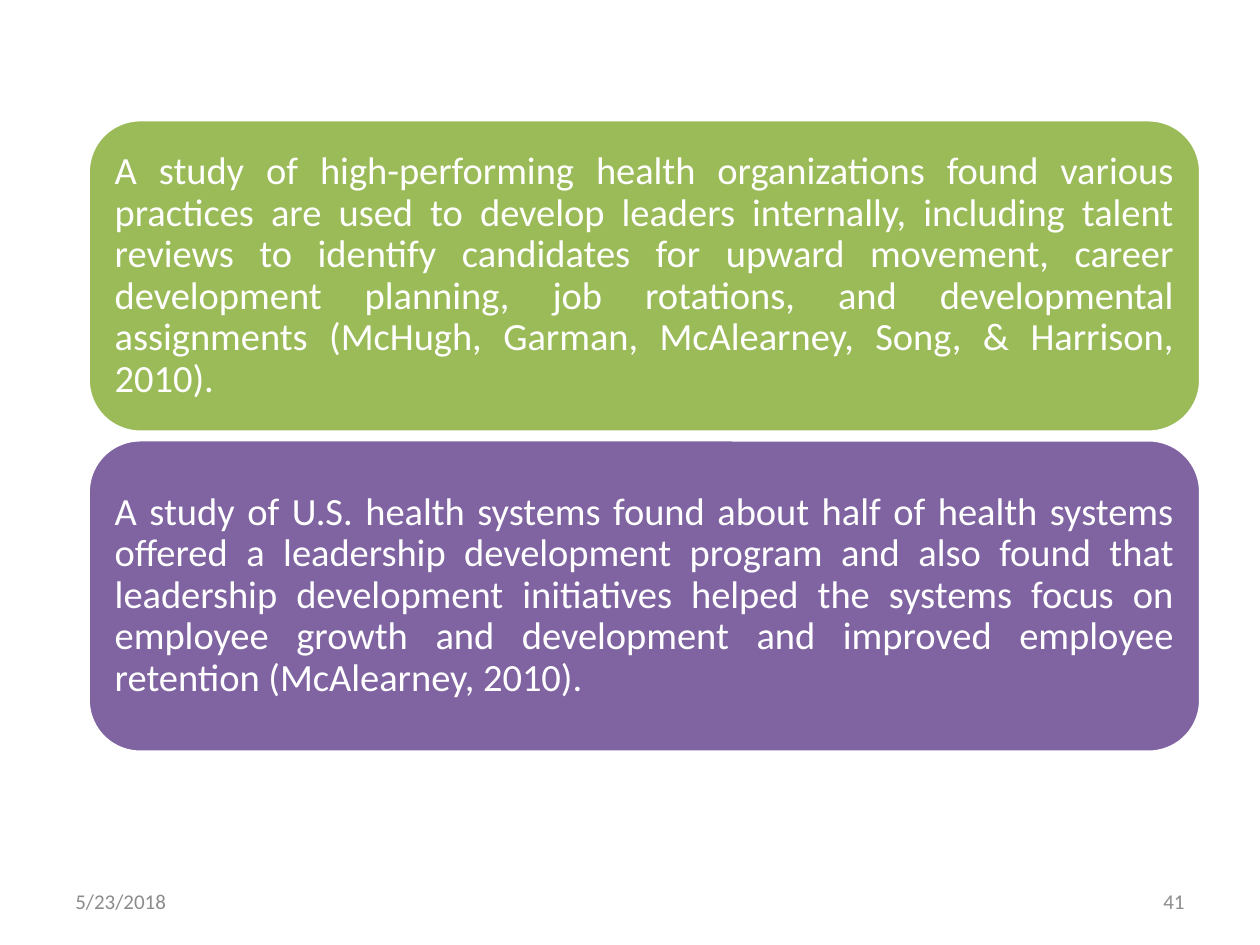
import dataclasses

import pptx
import pptx.dml.color
import pptx.enum.shapes
import pptx.enum.text
import pptx.util

Inches = pptx.util.Inches
Pt = pptx.util.Pt
ALIGN = pptx.enum.text.PP_ALIGN
LEFT, TOP, WIDTH, HEIGHT, GAP = 0.7, 0.95, 8.83, 2.48, 0.06


@dataclasses.dataclass
class Study:
    text: str
    fill: str


STUDIES = [
    Study("A study of high-performing health organizations found various "
          "practices are used to develop leaders internally, including talent "
          "reviews to identify candidates for upward movement, career "
          "development planning, job rotations, and developmental assignments "
          "(McHugh, Garman, McAlearney, Song, & Harrison, 2010).", "9BBB59"),
    Study("A study of U.S. health systems found about half of health systems "
          "offered a leadership development program and also found that "
          "leadership development initiatives helped the systems focus on "
          "employee growth and development and improved employee retention "
          "(McAlearney, 2010).", "8064A2"),
]


def color(code: str) -> pptx.dml.color.RGBColor:
    return pptx.dml.color.RGBColor.from_string(code)


def write(shape, text: str, *, size: float, ink: str, align=ALIGN.LEFT,
          inset: float | None = None, spacing: float | None = None,
          after: float | None = None) -> None:
    frame = shape.text_frame
    frame.word_wrap = True
    frame.vertical_anchor = pptx.enum.text.MSO_ANCHOR.MIDDLE
    if inset is not None:
        frame.margin_left = frame.margin_right = Inches(inset)
        frame.margin_top = frame.margin_bottom = Inches(inset)
    para = frame.paragraphs[0]
    para.alignment = align
    para.line_spacing = spacing
    if after is not None:
        para.space_after = Pt(after)
    run = para.add_run()
    run.text = text
    run.font.name = "Calibri"
    run.font.size = Pt(size)
    run.font.color.rgb = color(ink)


def panel(slide, study: Study, top: float) -> None:
    shape = slide.shapes.add_shape(
        pptx.enum.shapes.MSO_SHAPE.ROUNDED_RECTANGLE,
        Inches(LEFT), Inches(top), Inches(WIDTH), Inches(HEIGHT))
    shape.shadow.inherit = False
    shape.fill.solid()
    shape.fill.fore_color.rgb = color(study.fill)
    shape.line.color.rgb = color("FFFFFF")
    shape.line.width = Pt(2)
    write(shape, study.text, size=22, ink="FFFFFF", align=ALIGN.JUSTIFY,
          inset=0.09, spacing=0.9, after=7.7)


def footer(slide, text: str, left: float, align) -> None:
    box = slide.shapes.add_textbox(
        Inches(left), Inches(6.95), Inches(2.33), Inches(0.4))
    write(box, text, size=12, ink="8C8C8C", align=align)


def main() -> None:
    deck = pptx.Presentation()
    deck.slide_width, deck.slide_height = Inches(10), Inches(7.5)
    slide = deck.slides.add_slide(deck.slide_layouts[6])
    footer(slide, "5/23/2018", 0.5, ALIGN.LEFT)
    footer(slide, "41", 7.17, ALIGN.RIGHT)
    for row, study in enumerate(STUDIES):
        panel(slide, study, TOP + row * (HEIGHT + GAP))
    deck.save("out.pptx")


if __name__ == "__main__":
    main()
